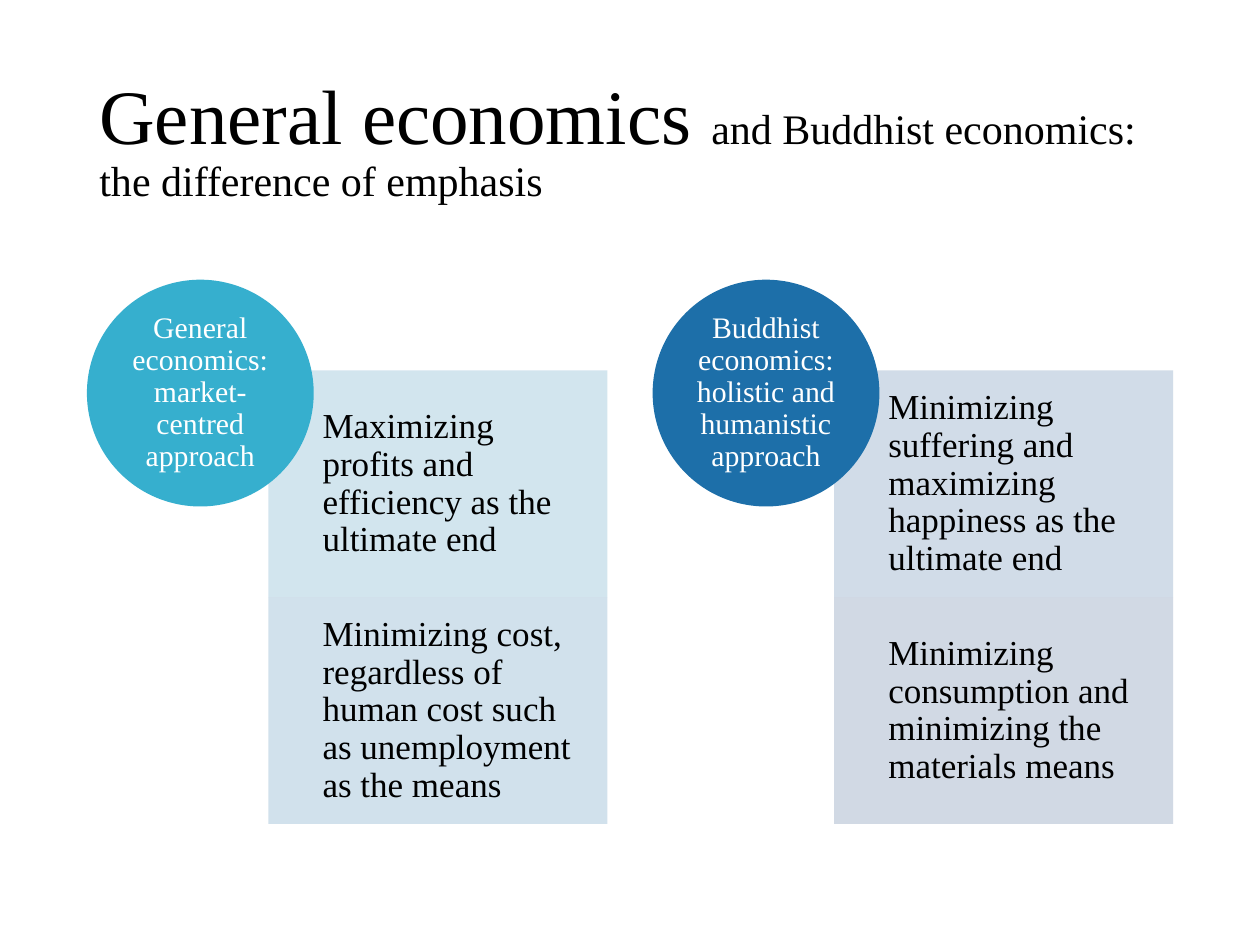
from dataclasses import dataclass

from lxml import etree
from pptx import Presentation
from pptx.dml.color import RGBColor
from pptx.enum.shapes import MSO_SHAPE
from pptx.enum.text import MSO_ANCHOR, PP_ALIGN
from pptx.oxml.ns import qn
from pptx.util import Inches, Pt

RECT, OVAL = MSO_SHAPE.RECTANGLE, MSO_SHAPE.OVAL
LEFT, CENTER = PP_ALIGN.LEFT, PP_ALIGN.CENTER
MIDDLE = MSO_ANCHOR.MIDDLE


@dataclass(frozen=True)
class Theme:
    font: str = "Times New Roman"
    dark: str = "000000"
    light: str = "FFFFFF"
    title: int = 44
    subtitle: int = 24
    body: int = 20
    label: int = 17
    spacing: float = 0.9
    panel_alpha: int = 90


@dataclass(frozen=True)
class Panel:
    text: str
    color: str


@dataclass(frozen=True)
class Approach:
    label: str
    color: str
    panels: tuple[Panel, ...]


THEME = Theme()
MARGIN, TOP, PITCH = 0.69, 2.22, 4.49
UNIT = 1.8
PANEL_DX, PANEL_DY, PANEL_W = 1.44, 0.72, 2.69
PANEL_INSETS = (0.43, 0.16, 0.16, 0.16)

APPROACHES = (
    Approach("General economics: market-centred approach", "36AFCE", (
        Panel("Maximizing profits and efficiency as the ultimate end", "CEE3ED"),
        Panel("Minimizing cost, regardless of human cost such as unemployment "
              "as the means", "CDDEEA"),
    )),
    Approach("Buddhist economics: holistic and humanistic approach", "1D6FA9", (
        Panel("Minimizing suffering and maximizing happiness as the ultimate end",
              "CDD9E6"),
        Panel("Minimizing consumption and minimizing the materials means", "CCD5E2"),
    )),
)


def write(tf, runs: list[tuple[str, int]], color: str, align, insets: tuple) -> None:
    sides = ("margin_left", "margin_top", "margin_right", "margin_bottom")
    frame = {"word_wrap": True, "vertical_anchor": MIDDLE,
             **{side: Inches(v) for side, v in zip(sides, insets)}}
    for name, value in frame.items():
        setattr(tf, name, value)
    p = tf.paragraphs[0]
    p.alignment = align
    p.line_spacing = THEME.spacing
    for text, size in runs:
        r = p.add_run()
        r.text = text
        for name, value in {"name": THEME.font, "size": Pt(size)}.items():
            setattr(r.font, name, value)
        r.font.color.rgb = RGBColor.from_string(color)


def add_filled(s, kind, x: float, y: float, w: float, color: str, alpha: int = 100):
    sp = s.shapes.add_shape(kind, Inches(x), Inches(y), Inches(w), Inches(UNIT))
    sp.shadow.inherit = False
    sp.line.fill.background()
    sp.fill.solid()
    sp.fill.fore_color.rgb = RGBColor.from_string(color)
    if alpha < 100:
        clr = sp.fill._xPr.find(qn("a:solidFill"))[0]
        etree.SubElement(clr, qn("a:alpha")).set("val", str(alpha * 1000))
    return sp


def add_approach(s, approach: Approach, x: float) -> None:
    for row, panel in enumerate(approach.panels):
        sp = add_filled(s, RECT, x + PANEL_DX, TOP + PANEL_DY + row * UNIT,
                        PANEL_W, panel.color, THEME.panel_alpha)
        write(sp.text_frame, [(panel.text, THEME.body)], THEME.dark, LEFT,
              PANEL_INSETS)
    sp = add_filled(s, OVAL, x, TOP, UNIT, approach.color)
    write(sp.text_frame, [(approach.label, THEME.label)], THEME.light, CENTER,
          (0, 0, 0, 0))


def main() -> None:
    prs = Presentation()
    prs.slide_width, prs.slide_height = Inches(10), Inches(7.5)
    s = prs.slides.add_slide(prs.slide_layouts[6])
    title = s.shapes.add_textbox(Inches(MARGIN), Inches(0.4), Inches(8.62), Inches(1.45))
    write(title.text_frame,
          [("General economics ", THEME.title),
           ("and Buddhist economics: the difference of emphasis", THEME.subtitle)],
          THEME.dark, LEFT, (0.1, 0.05, 0.1, 0.05))
    for i, approach in enumerate(APPROACHES):
        add_approach(s, approach, MARGIN + i * PITCH)
    prs.save("out.pptx")


if __name__ == "__main__":
    main()
